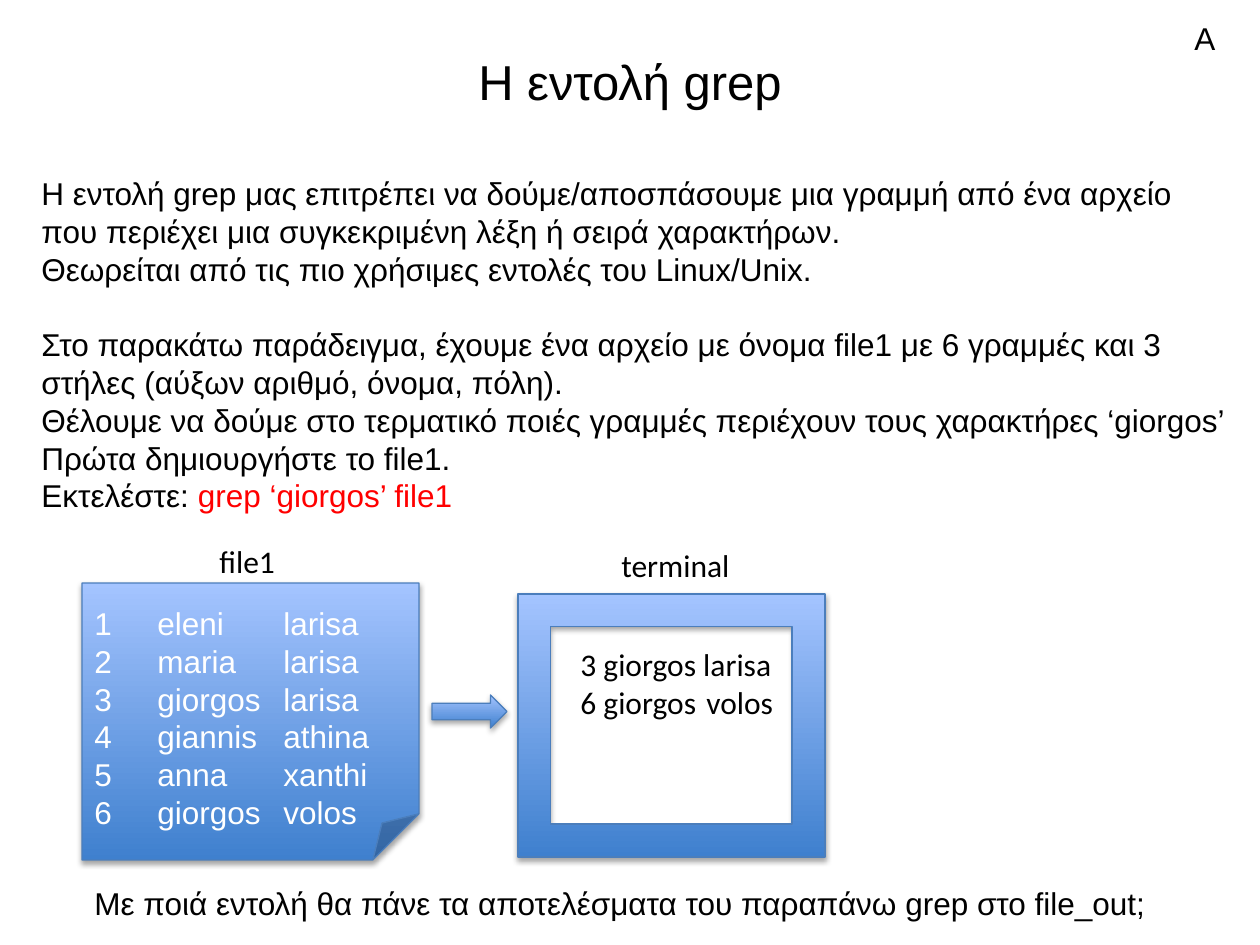
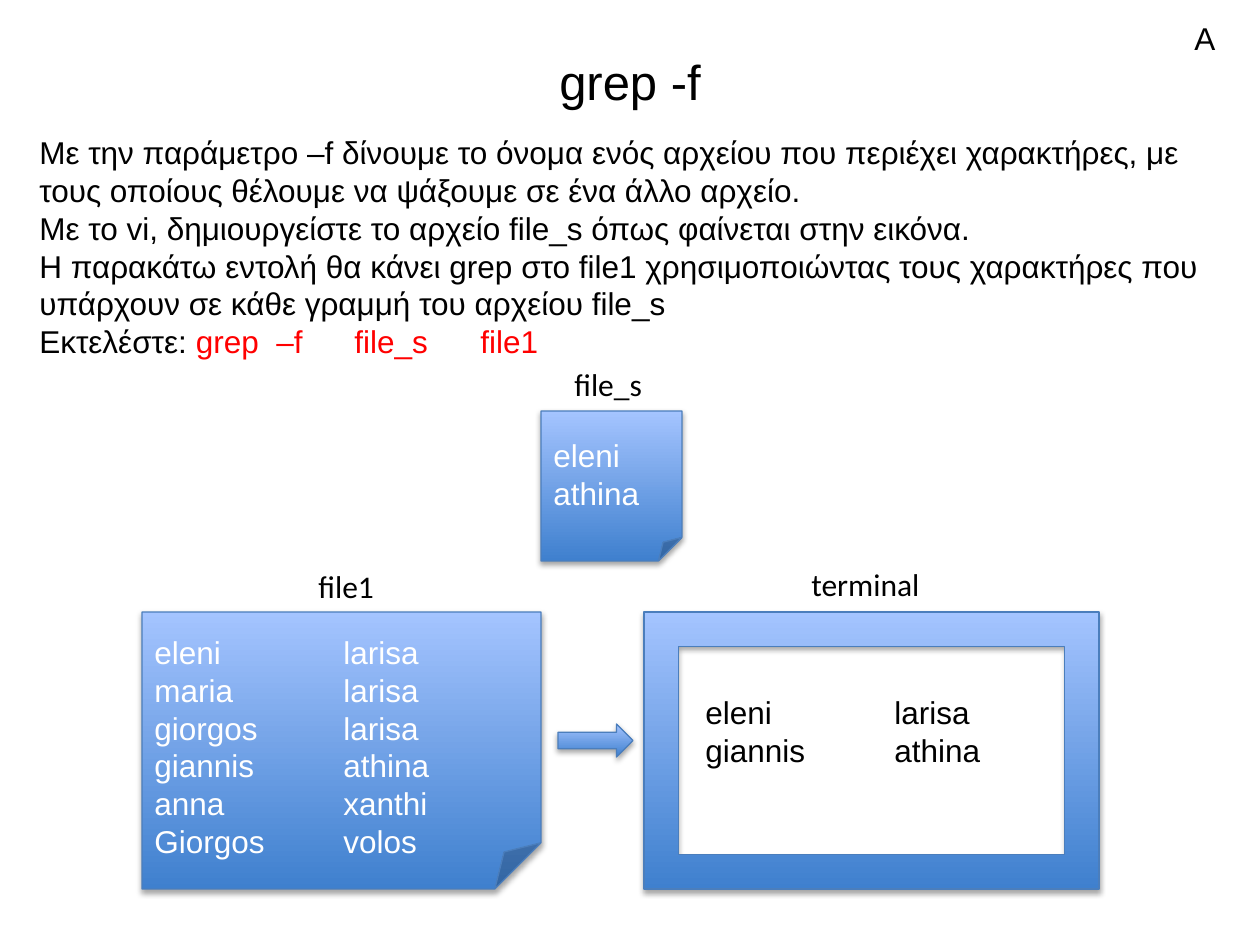
from lxml.etree import SubElement
from pptx import Presentation
from pptx.dml.color import RGBColor
from pptx.enum.shapes import MSO_SHAPE
from pptx.enum.text import MSO_ANCHOR, MSO_AUTO_SIZE, PP_ALIGN
from pptx.oxml.ns import qn
from pptx.util import Pt

PX = 914400 / 126
BLACK = RGBColor(0x00, 0x00, 0x00)
WHITE = RGBColor(0xFF, 0xFF, 0xFF)
RED = RGBColor(0xFF, 0x00, 0x00)
DEEP = RGBColor(0x3F, 0x80, 0xCE)
PALE = RGBColor(0xA4, 0xC4, 0xFF)
EDGE = RGBColor(0x4B, 0x7E, 0xBC)
LINE = 21.5  # height of one text line in points


def write(shape, text, font="Arial", size=18, color=BLACK, align=PP_ALIGN.LEFT,
          wrap=True, tabs=(), gap=None, top=None):
    """Fill a shape with lines; what follows a | in a line is red."""
    frame = shape.text_frame
    frame.word_wrap = wrap
    frame.auto_size = MSO_AUTO_SIZE.NONE
    if top is not None:
        frame.vertical_anchor = MSO_ANCHOR.TOP
        frame.margin_top = round(top * PX)
    for i, line in enumerate(text.split("\n")):
        para = frame.paragraphs[0] if i == 0 else frame.add_paragraph()
        para.alignment = align
        if i == gap:
            para.space_before = Pt(LINE)
        if tabs and "\t" in line:
            stops = SubElement(para._p.get_or_add_pPr(), qn("a:tabLst"))
            for pos in tabs:
                SubElement(stops, qn("a:tab"), pos=str(round(pos * PX)), algn="l")
        for part, tint in zip(line.split("|"), (color, RED)):
            run = para.add_run()
            run.text = part
            run.font.name = font
            run.font.size = Pt(size)
            run.font.color.rgb = tint


def block(slide, kind, box):
    """Add a blue shape with gradient and soft shadow."""
    shape = slide.shapes.add_shape(kind, *[round(v * PX) for v in box])
    shape.fill.gradient()
    shape.fill.gradient_angle = 90
    for stop, tint in zip(shape.fill.gradient_stops, (DEEP, PALE)):
        stop.color.rgb = tint
    shape.line.color.rgb = EDGE
    shape.line.width = Pt(0.75)
    shape.shadow.inherit = False
    glow = SubElement(shape._element.spPr.find(qn("a:effectLst")), qn("a:outerShdw"),
                      blurRad="40000", dist="23000", dir="5400000", rotWithShape="0")
    shade = SubElement(glow, qn("a:srgbClr"), val="000000")
    SubElement(shade, qn("a:alpha"), val="35000")
    return shape


# Content of the two slides
pages = [
    dict(
        title="Η εντολή grep",
        files=[((82, 583, 337, 277),
                "1\teleni\tlarisa\n2\tmaria\tlarisa\n3\tgiorgos\tlarisa\n"
                "4\tgiannis\tathina\n5\tanna\txanthi\n6\tgiorgos\tvolos",
                dict(tabs=(63, 189), top=21))],
        arrow=(432, 695, 75, 33),
        screen=(518, 594, 307, 263),
        notes=[
            ((29, 168, 1212, 357),
             "Η εντολή grep μας επιτρέπει να δούμε/αποσπάσουμε μια γραμμή από ένα αρχείο "
             "που περιέχει μια συγκεκριμένη λέξη ή σειρά χαρακτήρων.\n"
             "Θεωρείται από τις πιο χρήσιμες εντολές του Linux/Unix.\n"
             "Στο παρακάτω παράδειγμα, έχουμε ένα αρχείο με όνομα file1 με 6 γραμμές και 3 "
             "στήλες (αύξων αριθμό, όνομα, πόλη).\n"
             "Θέλουμε να δούμε στο τερματικό ποιές γραμμές περιέχουν τους χαρακτήρες ‘giorgos’\n"
             "Πρώτα δημιουργήστε το file1.\n"
             "Εκτελέστε: |grep ‘giorgos’ file1",
             dict(gap=2)),
            ((568, 639, 219, 89), "3 giorgos larisa\n6 giorgos\tvolos",
             dict(font="Calibri", wrap=False, tabs=(126,))),
            ((82, 878, 1157, 50),
             "Με ποιά εντολή θα πάνε τα αποτελέσματα του παραπάνω grep στο file_out;", {}),
        ],
        labels=[(207, 536, 82, "file1"), (609, 540, 135, "terminal")],
    ),
    dict(
        title="grep -f",
        files=[((142, 612, 399, 277),
                "eleni\tlarisa\nmaria\tlarisa\ngiorgos\tlarisa\n"
                "giannis\tathina\nanna\txanthi\nGiorgos\tvolos",
                dict(tabs=(189,), top=21)),
               ((541, 411, 141, 150), "eleni\nathina", {})],
        arrow=(558, 724, 75, 33),
        screen=(644, 612, 455, 277),
        notes=[
            ((27, 127, 1212, 242),
             "Με την παράμετρο –f δίνουμε το όνομα ενός αρχείου που περιέχει χαρακτήρες, με "
             "τους οποίους θέλουμε να ψάξουμε σε ένα άλλο αρχείο.\n"
             "Με το vi, δημιουργείστε το αρχείο file_s όπως φαίνεται στην εικόνα.\n"
             "H παρακάτω εντολή θα κάνει grep στο file1 χρησιμοποιώντας τους χαρακτήρες που "
             "υπάρχουν σε κάθε γραμμή του αρχείου file_s\n"
             "Εκτελέστε: |grep\t–f\tfile_s\tfile1",
             dict(tabs=(237, 315, 441))),
            ((693, 687, 364, 89), "eleni\tlarisa\ngiannis\tathina", dict(tabs=(189,))),
        ],
        labels=[(306, 561, 82, "file1"), (799, 559, 135, "terminal"),
                (562, 359, 95, "file_s")],
    ),
]

deck = Presentation()
deck.slide_width = round(1260 * PX)
deck.slide_height = round(945 * PX)

for page in pages:
    slide = deck.slides.add_slide(deck.slide_layouts[5])

    # Title
    title = slide.shapes.title
    title.left, title.top, title.width, title.height = [
        round(v * PX) for v in (63, 38, 1134, 86)]
    write(title, page["title"], size=28, align=PP_ALIGN.CENTER)

    # Files, arrow and terminal
    for box, text, style in page["files"]:
        write(block(slide, MSO_SHAPE.FOLDED_CORNER, box), text, color=WHITE, **style)
    block(slide, MSO_SHAPE.RIGHT_ARROW, page["arrow"])
    block(slide, MSO_SHAPE.FRAME, page["screen"])

    # Text, labels and the corner mark
    notes = page["notes"] + [((1182, 13, 63, 50), "Α", {})]
    for left, top, width, name in page["labels"]:
        notes.append(((left, top, width, 50), name, dict(font="Calibri", wrap=False)))
    for box, text, style in notes:
        write(slide.shapes.add_textbox(*[round(v * PX) for v in box]), text, **style)

deck.save("out.pptx")
